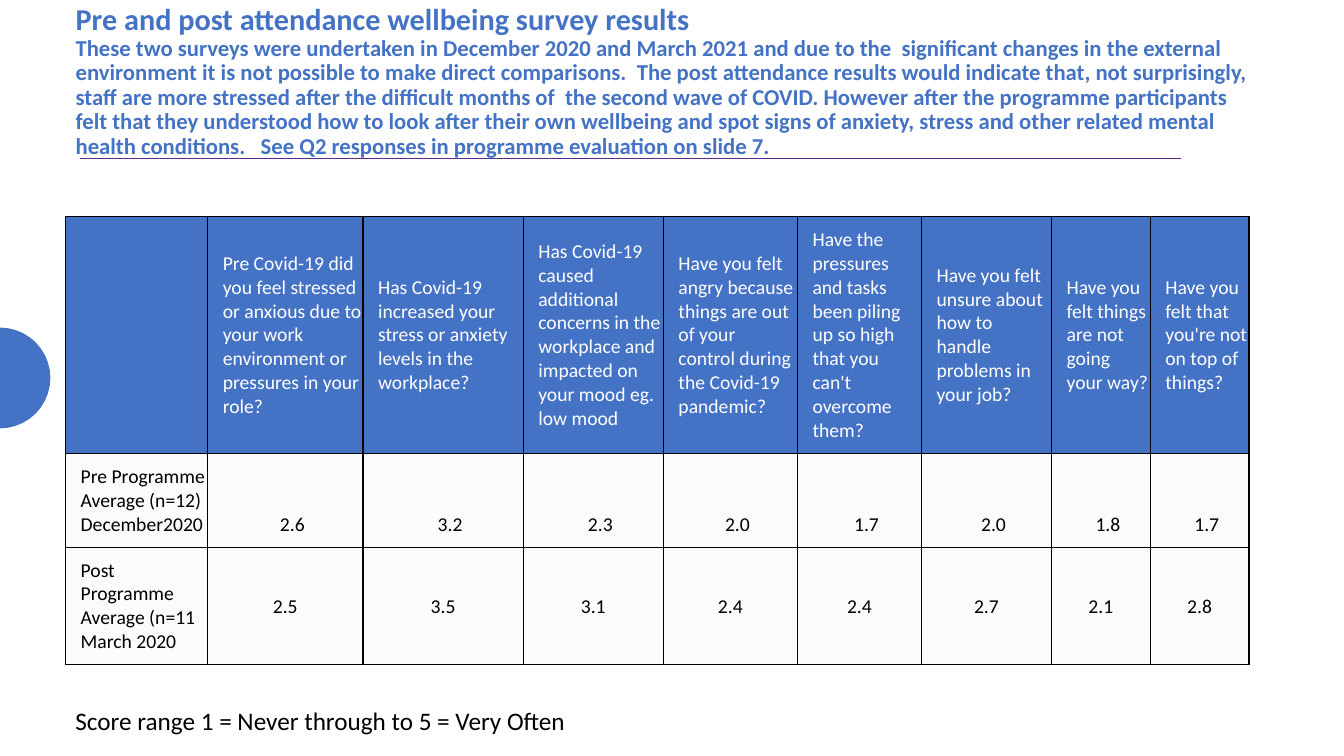
from copy import deepcopy
from dataclasses import dataclass
from math import cos, pi, sin

from lxml.etree import SubElement
from pptx import Presentation
from pptx.dml.color import RGBColor
from pptx.enum.shapes import MSO_CONNECTOR as Connector
from pptx.enum.text import MSO_ANCHOR as Anchor, MSO_AUTO_SIZE as AutoSize, PP_ALIGN as Align
from pptx.oxml import parse_xml
from pptx.oxml.ns import nsdecls, qn
from pptx.util import Emu, Pt

SCALE = 9144


@dataclass(frozen=True)
class Theme:
    """Colours, font and type sizes of the slide."""
    font: str = "Calibri"
    blue: str = "4472C4"
    purple: str = "572A86"
    pale: str = "F2F2F2"
    black: str = "000000"
    white: str = "FFFFFF"
    heading: float = 21.6
    summary: float = 16.2
    cell: float = 14
    note: float = 18


THEME = Theme()
HEADING = "Pre and post attendance wellbeing survey results"
SUMMARY = (
    "These two surveys were undertaken in December 2020 and March 2021 and due to the  significant "
    "changes in the external environment it is not possible to make direct comparisons.  The post "
    "attendance results would indicate that, not surprisingly, staff are more stressed after the "
    "difficult months of  the second wave of COVID. However after the programme participants felt that "
    "they understood how to look after their own wellbeing and spot signs of anxiety, stress and other "
    "related mental health conditions.   See Q2 responses in programme evaluation on slide 7."
)
QUESTIONS = [
    "",
    "Pre Covid-19 did you feel stressed or anxious due to your work environment or pressures in your role?",
    "Has Covid-19 increased your stress or anxiety levels in the workplace?",
    "Has Covid-19 caused additional concerns in the workplace and impacted on your mood eg. low mood",
    "Have you felt angry because things are out of your control during the Covid-19 pandemic?",
    "Have the pressures and tasks been piling up so high that you can't overcome them?",
    "Have you felt unsure about how to handle problems in your job?",
    "Have you felt things are not going your way?",
    "Have you felt that you're not on top of things?",
]
PRE_SCORES = ["Pre Programme Average (n=12)\nDecember2020",
              "2.6", "3.2", "2.3", "2.0", "1.7", "2.0", "1.8", "1.7"]
POST_SCORES = ["Post Programme Average (n=11\nMarch 2020",
               "2.5", "3.5", "3.1", "2.4", "2.4", "2.7", "2.1", "2.8"]
COLUMN_WIDTHS = [141, 154, 159, 139, 133, 123, 129, 98, 98]
ROW_HEIGHTS = [231, 69, 92]
WIDE_INSETS = (15, 11, 1, 11)
TIGHT_INSETS = (1, 1, 1, 0)


def px(length):
    """Turn px into EMU."""
    return Emu(length * SCALE)


def style(span, size, color, bold=False):
    """Set the font of a run."""
    span.font.name = THEME.font
    span.font.size = Pt(size)
    span.font.bold = bold
    span.font.color.rgb = RGBColor.from_string(color)


def add_half_disc(page, center_y, radius, steps=20):
    """Draw the half disc on the left edge."""
    angles = [pi * step / steps - pi / 2 for step in range(steps + 1)]
    points = [(round(radius * cos(angle) * SCALE), round((center_y + radius * sin(angle)) * SCALE))
              for angle in angles]
    builder = page.shapes.build_freeform(*points[0])
    builder.add_line_segments(points[1:], close=True)
    disc = builder.convert_to_shape()
    disc.shadow.inherit = False
    disc.fill.solid()
    disc.fill.fore_color.rgb = RGBColor.from_string(THEME.blue)
    disc.line.fill.background()


def add_rule(page, left, top, width):
    """Draw the thin line under the title."""
    rule = page.shapes.add_connector(Connector.STRAIGHT, px(left), px(top), px(left + width), px(top))
    rule.line.color.rgb = RGBColor.from_string(THEME.purple)
    rule.line.width = Pt(0.5)
    SubElement(rule._element.spPr, qn("a:effectLst"))


def fill_title(page, left, top, width, height):
    """Place the heading and its summary in the title placeholder."""
    title = page.shapes.title
    title.left, title.top, title.width, title.height = map(px, (left, top, width, height))
    frame = title.text_frame
    frame.auto_size = AutoSize.NONE
    frame.vertical_anchor = Anchor.MIDDLE
    para = frame.paragraphs[0]
    para.text = f"{HEADING}\v{SUMMARY}"
    para.alignment = Align.LEFT
    para.line_spacing = 0.9
    for span, size in zip(para.runs, (THEME.heading, THEME.summary)):
        style(span, size, THEME.blue, bold=True)
    line_break = para._p.find(qn("a:br"))
    line_break.append(deepcopy(para.runs[0]._r.rPr))


def add_borders(cell):
    """Give a cell black borders on all sides."""
    properties = cell._tc.get_or_add_tcPr()
    for index, side in enumerate("LRTB"):
        properties.insert(index, parse_xml(
            f'<a:ln{side} {nsdecls("a")} w="12700"><a:solidFill>'
            f'<a:srgbClr val="{THEME.black}"/></a:solidFill></a:ln{side}>'))


def fill_cell(cell, text, fill, color, anchor, align, insets):
    """Write and format one table cell."""
    cell.text = text
    cell.vertical_anchor = anchor
    cell.margin_left, cell.margin_top, cell.margin_right, cell.margin_bottom = map(px, insets)
    cell.fill.solid()
    cell.fill.fore_color.rgb = RGBColor.from_string(fill)
    if fill == THEME.pale:
        tint = cell._tc.tcPr.find(f'{qn("a:solidFill")}/{qn("a:srgbClr")}')
        SubElement(tint, qn("a:alpha"), val="30000")
    add_borders(cell)
    for para in cell.text_frame.paragraphs:
        para.alignment = align
        for span in para.runs:
            style(span, THEME.cell, color)


def add_survey_table(page, left, top):
    """Build the table of questions and average scores."""
    frame = page.shapes.add_table(len(ROW_HEIGHTS), len(COLUMN_WIDTHS), px(left), px(top),
                                  px(sum(COLUMN_WIDTHS)), px(sum(ROW_HEIGHTS)))
    table = frame.table
    table.first_row = table.horz_banding = False
    for column, width in zip(table.columns, COLUMN_WIDTHS):
        column.width = px(width)
    for row, height in zip(table.rows, ROW_HEIGHTS):
        row.height = px(height)
    header = (THEME.blue, THEME.white, Anchor.MIDDLE, Align.LEFT, WIDE_INSETS)
    label = (THEME.pale, THEME.black, Anchor.BOTTOM, Align.LEFT, WIDE_INSETS)
    pre = (THEME.pale, THEME.black, Anchor.BOTTOM, Align.CENTER, WIDE_INSETS)
    post = (THEME.pale, THEME.black, Anchor.MIDDLE, Align.CENTER, TIGHT_INSETS)
    rows = [(QUESTIONS, header, header), (PRE_SCORES, label, pre), (POST_SCORES, label, post)]
    for row, (texts, first, others) in zip(table.rows, rows):
        for index, (cell, text) in enumerate(zip(row.cells, texts)):
            fill_cell(cell, text, *(others if index else first))


def add_note(page, text, left, top, width, height):
    """Add the one-line note on the score range."""
    box = page.shapes.add_textbox(*map(px, (left, top, width, height)))
    frame = box.text_frame
    frame.word_wrap = False
    frame.auto_size = AutoSize.SHAPE_TO_FIT_TEXT
    frame.text = text
    style(frame.paragraphs[0].runs[0], THEME.note, THEME.black)


def main():
    """Build the survey results slide."""
    deck = Presentation()
    deck.slide_width, deck.slide_height = px(1333), px(750)
    page = deck.slides.add_slide(deck.slide_layouts[5])
    add_half_disc(page, 375, 50)
    add_rule(page, 79, 157, 1092)
    add_survey_table(page, 65, 215)
    fill_title(page, 65, 32, 1195, 98)
    add_note(page, "Score range 1 = Never through to 5 = Very Often", 65, 695, 513, 40)
    deck.save("out.pptx")


if __name__ == "__main__":
    main()
